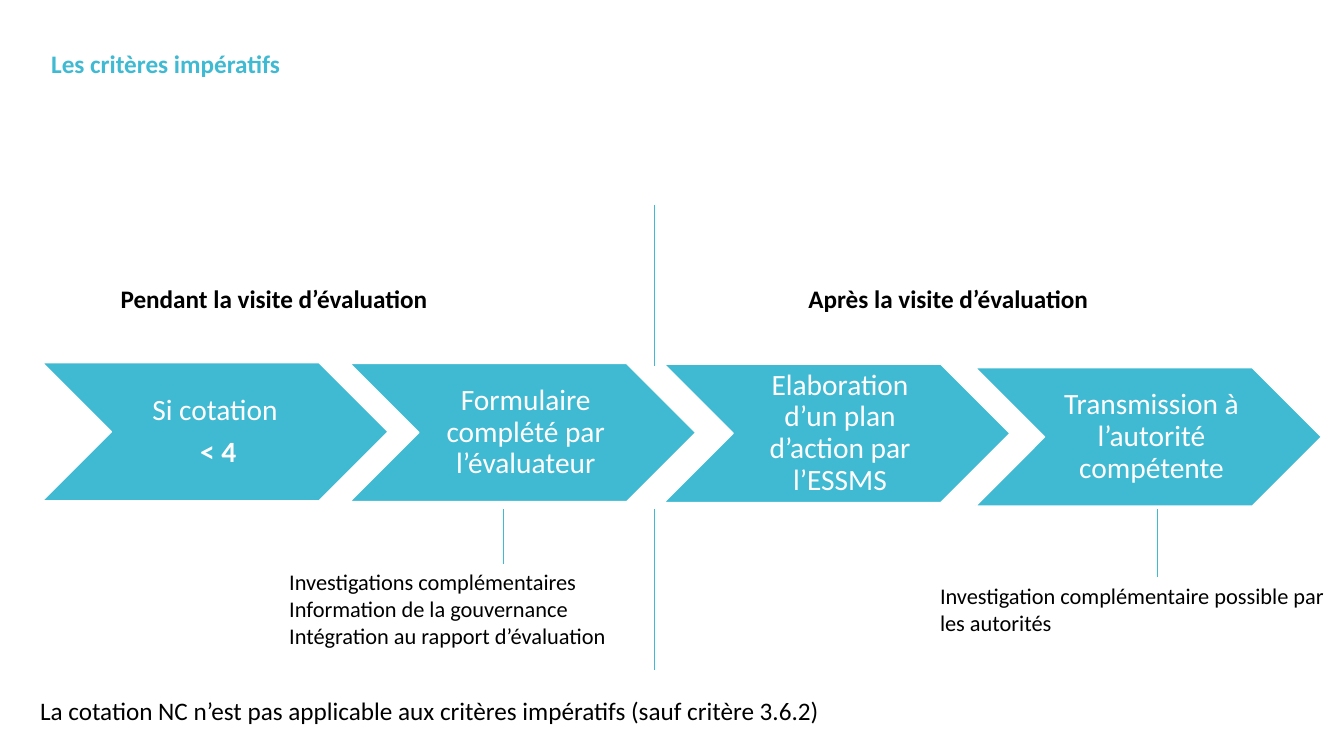
from dataclasses import dataclass

from lxml import etree
from pptx import Presentation
from pptx.dml.color import RGBColor
from pptx.enum import shapes, text
from pptx.oxml import ns
from pptx.util import Cm, Pt


@dataclass(frozen=True)
class Theme:
    font: str = "Calibri"
    accent: RGBColor = RGBColor(0x40, 0xBA, 0xD2)
    ink: RGBColor = RGBColor(0, 0, 0)
    light: RGBColor = RGBColor(255, 255, 255)
    step_size: int = 21
    main_size: int = 18
    detail_size: int = 16


THEME = Theme()

TITLE = "Les critères impératifs"
FOOTNOTE = "La cotation NC n’est pas applicable aux critères impératifs (sauf critère 3.6.2)"
# Phase heading and its left edge, in cm
PHASES = [("Pendant la visite d’évaluation", 2.79), ("Après la visite d’évaluation", 20.12)]
# Paragraphs, left and top, in cm
STEPS = [
    (["Si cotation ", "< 4"], 1.07, 9.14),
    (["Formulaire complété par l’évaluateur"], 8.82, 9.16),
    (["Elaboration d’un plan d’action par l’ESSMS"], 16.74, 9.18),
    (["Transmission à l’autorité compétente"], 24.59, 9.27),
]
# Paragraphs, left, top, height and connector x, in cm
DETAILS = [
    (["Investigations complémentaires", "Information de la gouvernance",
      "Intégration au rapport d’évaluation"], 7.04, 14.2, 2.31, 12.7),
    (["Investigation complémentaire possible par les autorités"], 23.44, 14.55, 1.63, 29.16),
]
STEP_WIDTH, STEP_HEIGHT = 8.71, 3.48
DIVIDER_X, DIVIDER_LENGTH = 16.5, 4.06
DIVIDER_TOP, BELOW_STEPS = 5.16, 12.83
LINE_HEIGHT = 1.02


def write(frame, lines, size, color, bold=False):
    frame.text = "\n".join(lines)
    for para in frame.paragraphs:
        for span in para.runs:
            span.font.name = THEME.font
            span.font.size = Pt(size)
            span.font.color.rgb = color
            span.font.bold = bold


def add_text(page, lines, left, top, width, height, size, color=THEME.ink, bold=False, wrap=True):
    box = page.shapes.add_textbox(Cm(left), Cm(top), Cm(width), Cm(height))
    write(box.text_frame, lines, size, color, bold)
    box.text_frame.word_wrap = wrap
    box.text_frame.auto_size = text.MSO_AUTO_SIZE.SHAPE_TO_FIT_TEXT


def add_step(page, lines, left, top):
    step = page.shapes.add_shape(shapes.MSO_SHAPE.CHEVRON, Cm(left), Cm(top),
                                 Cm(STEP_WIDTH), Cm(STEP_HEIGHT))
    step.shadow.inherit = False
    step.fill.solid()
    step.fill.fore_color.rgb = THEME.accent
    step.line.color.rgb = THEME.light
    step.line.width = Pt(0.85)
    frame = step.text_frame
    frame.word_wrap = True
    frame.vertical_anchor = text.MSO_ANCHOR.MIDDLE
    frame.margin_left = Cm(0.22)
    frame.margin_right = frame.margin_top = frame.margin_bottom = Cm(0.07)
    write(frame, lines, THEME.step_size, THEME.light)
    for para in frame.paragraphs:
        para.alignment = text.PP_ALIGN.CENTER
        para.line_spacing = 0.9
        para.space_after = Pt(0.35 * THEME.step_size)
    for para in frame.paragraphs[1:]:
        para.runs[0].font.bold = True


def add_vertical_line(page, x, top, bottom):
    line = page.shapes.add_connector(shapes.MSO_CONNECTOR.STRAIGHT,
                                     Cm(x), Cm(top), Cm(x), Cm(bottom))
    line.line.color.rgb = THEME.accent
    line.line.width = Pt(0.75)
    etree.SubElement(line.element.spPr, ns.qn("a:effectLst"))


def main():
    deck = Presentation()
    deck.slide_width, deck.slide_height = Cm(33.87), Cm(19.05)
    page = deck.slides.add_slide(deck.slide_layouts[6])

    add_text(page, [TITLE], 1.04, 1.09, 6.6, LINE_HEIGHT,
             THEME.main_size, THEME.accent, bold=True, wrap=False)
    for heading, left in PHASES:
        add_text(page, [heading], left, 7.01, 12.6, LINE_HEIGHT, THEME.main_size, bold=True)
    for lines, left, top in STEPS:
        add_step(page, lines, left, top)
    for top in (DIVIDER_TOP, BELOW_STEPS):
        add_vertical_line(page, DIVIDER_X, top, top + DIVIDER_LENGTH)
    for lines, left, top, height, line_x in DETAILS:
        add_text(page, lines, left, top, 10.41, height, THEME.detail_size)
        add_vertical_line(page, line_x, BELOW_STEPS, top)
    add_text(page, [FOOTNOTE], 0.76, 17.4, 29.67, LINE_HEIGHT, THEME.main_size)

    deck.save("out.pptx")


if __name__ == "__main__":
    main()
